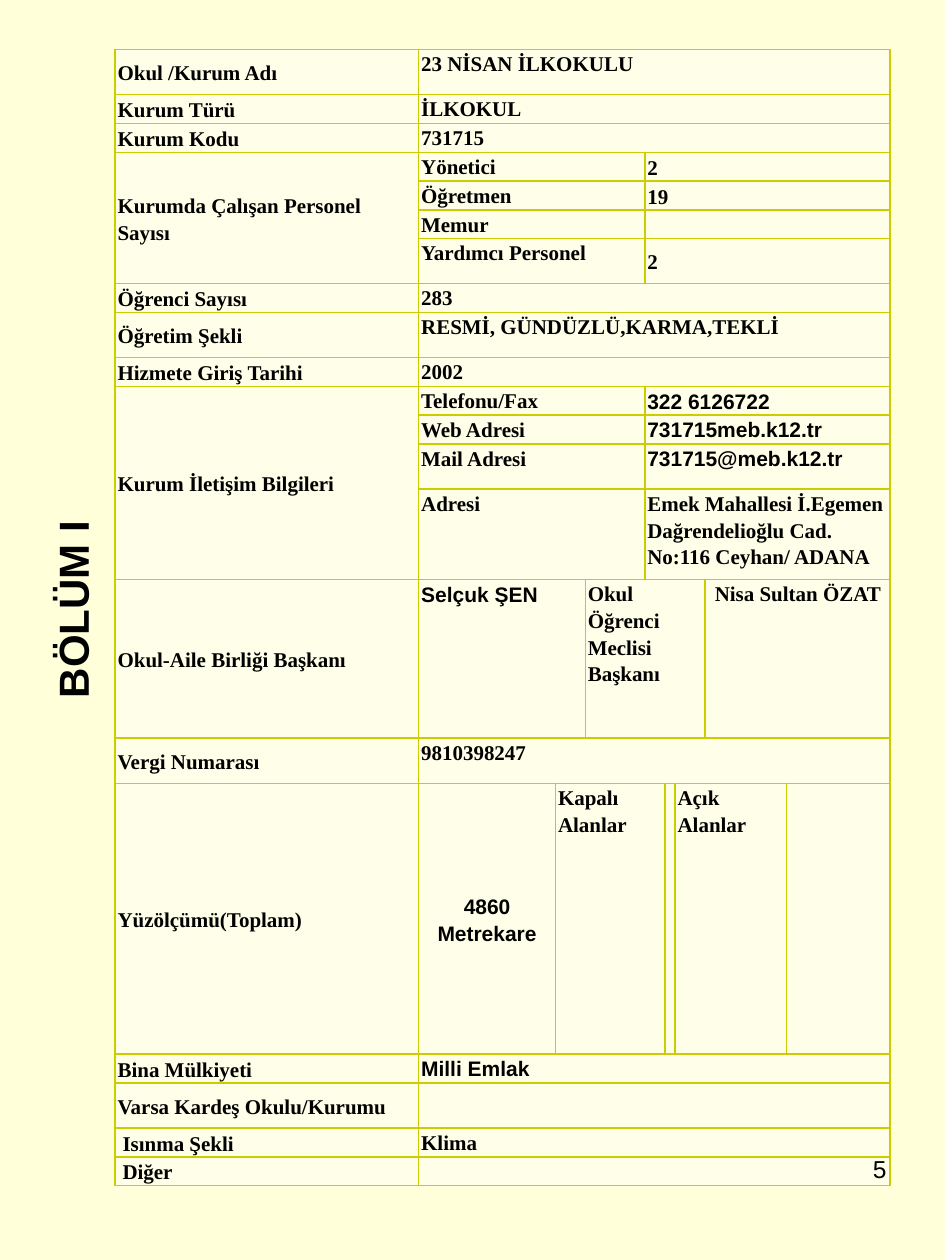
"""Build the school identity table slide of section one."""
from lxml import etree
from pptx import Presentation
from pptx import util as u
from pptx.dml.color import RGBColor
from pptx.enum import text as t
from pptx.oxml import ns

COLORS = {"background": "FFFFD9", "cell": "FFFFE9", "border": "CCCC00", "text": "000000"}
SERIF, SANS = "Times New Roman", "Arial"
TOP, MIDDLE = t.MSO_ANCHOR.TOP, t.MSO_ANCHOR.MIDDLE
SHORT, TALL = 0.58, 0.91
COLUMN_WIDTHS = [6.12, 2.76, 0.6, 1.2, 0.41, 0.19, 0.6, 1.65, 2.08]
WHOLE, LEFT_PART, RIGHT_PART = (1, 8), (1, 3), (4, 8)


def add_run(paragraph, content, font, size, bold=False):
    run = paragraph.add_run()
    run.text = content
    run.font.name = font
    run.font.size = u.Pt(size)
    run.font.bold = bold
    run.font.color.rgb = RGBColor.from_string(COLORS["text"])


def style_cell(cell):
    cell.margin_left = cell.margin_right = u.Cm(0.05)
    cell.margin_top = cell.margin_bottom = 0
    cell.fill.solid()
    cell.fill.fore_color.rgb = RGBColor.from_string(COLORS["cell"])
    properties = cell._tc.get_or_add_tcPr()
    for position, side in enumerate(("lnL", "lnR", "lnT", "lnB")):
        line = etree.Element(ns.qn(f"a:{side}"), w=str(u.Pt(1)))
        solid = etree.SubElement(line, ns.qn("a:solidFill"))
        etree.SubElement(solid, ns.qn("a:srgbClr"), val=COLORS["border"])
        properties.insert(position, line)


LABELS = [
    (0, "Okul /Kurum Adı"),
    (1, "Kurum Türü"),
    (2, "Kurum Kodu"),
    (3, "Kurumda Çalışan Personel Sayısı"),
    (7, "Öğrenci Sayısı"),
    (8, "Öğretim Şekli"),
    (9, "Hizmete Giriş Tarihi"),
    (10, "Kurum İletişim Bilgileri"),
    (14, "Okul-Aile Birliği Başkanı"),
    (15, "Vergi Numarası"),
    (16, "Yüzölçümü(Toplam)"),
    (17, "Bina Mülkiyeti"),
    (18, "Varsa Kardeş Okulu/Kurumu"),
    (19, "Isınma Şekli"),
    (20, "Diğer"),
]
WHOLE_VALUES = [
    (0, "23 NİSAN İLKOKULU", SERIF),
    (1, "İLKOKUL", SERIF),
    (2, "731715", SERIF),
    (7, "283", SERIF),
    (8, "RESMİ, GÜNDÜZLÜ,KARMA,TEKLİ", SERIF),
    (9, "2002", SERIF),
    (15, "9810398247", SERIF),
    (17, "Milli Emlak", SANS),
    (18, "", SERIF),
    (19, "Klima", SERIF),
    (20, "", SERIF),
]
SPLIT_VALUES = [
    (3, "Yönetici", "2", SERIF, MIDDLE),
    (4, "Öğretmen", "19", SERIF, MIDDLE),
    (5, "Memur", "", SERIF, MIDDLE),
    (6, "Yardımcı Personel", "2", SERIF, MIDDLE),
    (10, "Telefonu/Fax", "322 6126722", SANS, TOP),
    (11, "Web Adresi", "731715meb.k12.tr", SANS, TOP),
    (12, "Mail Adresi", "731715@meb.k12.tr", SANS, TOP),
    (13, "Adresi", "Emek Mahallesi İ.Egemen Dağrendelioğlu Cad. No:116 Ceyhan/ ADANA", SERIF, TOP),
]
ROW_SPANS = {3: 4, 10: 4}
INDENTS = {"Isınma Şekli": 0.15, "Diğer": 0.15, "Nisa Sultan ÖZAT": 0.2}
ROW_HEIGHTS = [SHORT] * 21
for row in (0, 6, 8, 12, 15, 18):
    ROW_HEIGHTS[row] = TALL
ROW_HEIGHTS[13], ROW_HEIGHTS[14], ROW_HEIGHTS[16] = 1.82, 3.2, 5.46

entries = [(row, (0, 0), label, SERIF, MIDDLE) for row, label in LABELS]
entries += [(row, WHOLE, value, font, TOP) for row, value, font in WHOLE_VALUES]
for row, name, value, font, anchor in SPLIT_VALUES:
    entries.append((row, LEFT_PART, name, SERIF, TOP))
    entries.append((row, RIGHT_PART, value, font, anchor))
entries += [
    (14, (1, 2), "Selçuk ŞEN", SANS, TOP),
    (14, (3, 6), "Okul Öğrenci Meclisi Başkanı", SERIF, TOP),
    (14, (7, 8), "Nisa Sultan ÖZAT", SERIF, TOP),
    (16, (1, 1), "4860 Metrekare", SANS, MIDDLE),
    (16, (2, 4), "Kapalı Alanlar", SERIF, TOP),
    (16, (6, 7), "Açık Alanlar", SERIF, TOP),
]

presentation = Presentation()
presentation.slide_width, presentation.slide_height = u.Cm(19.05), u.Cm(25.4)
slide = presentation.slides.add_slide(presentation.slide_layouts[6])
slide.background.fill.solid()
slide.background.fill.fore_color.rgb = RGBColor.from_string(COLORS["background"])

table = slide.shapes.add_table(
    len(ROW_HEIGHTS), len(COLUMN_WIDTHS), u.Cm(2.32), u.Cm(1), u.Cm(15.61), u.Cm(22.9)
).table
table.first_row = table.horz_banding = False
for column, width in zip(table.columns, COLUMN_WIDTHS):
    column.width = u.Cm(width)
for table_row, height in zip(table.rows, ROW_HEIGHTS):
    table_row.height = u.Cm(height)
for cell in table.iter_cells():
    style_cell(cell)

for row, (first, last), content, font, anchor in entries:
    cell = table.cell(row, first)
    last_row = row + ROW_SPANS.get(row, 1) - 1 if first == 0 else row
    if (last_row, last) != (row, first):
        cell.merge(table.cell(last_row, last))
    cell.vertical_anchor = anchor
    cell.margin_left = u.Cm(INDENTS.get(content, 0.05))
    paragraph = cell.text_frame.paragraphs[0]
    paragraph.line_spacing = 1.15
    if (row, first) == (16, 1):
        paragraph.alignment = t.PP_ALIGN.CENTER
    if content:
        add_run(paragraph, content, font, 12, True)

for cell in table.iter_cells():
    paragraph = cell.text_frame.paragraphs[0]
    if not paragraph.runs:
        etree.SubElement(paragraph._p, ns.qn("a:endParaRPr"), sz="1200")

section = slide.shapes.add_textbox(u.Cm(-0.74), u.Cm(11.46), u.Cm(4.42), u.Cm(1.3))
section.rotation = 270
section.text_frame.word_wrap = True
add_run(section.text_frame.paragraphs[0], "BÖLÜM I", SANS, 24, True)

page_number = slide.shapes.add_textbox(u.Cm(13.67), u.Cm(23.14), u.Cm(4.45), u.Cm(1.75))
page_number.text_frame.word_wrap = True
paragraph = page_number.text_frame.paragraphs[0]
paragraph.alignment = t.PP_ALIGN.RIGHT
add_run(paragraph, "5", SANS, 14)

presentation.save("out.pptx")
